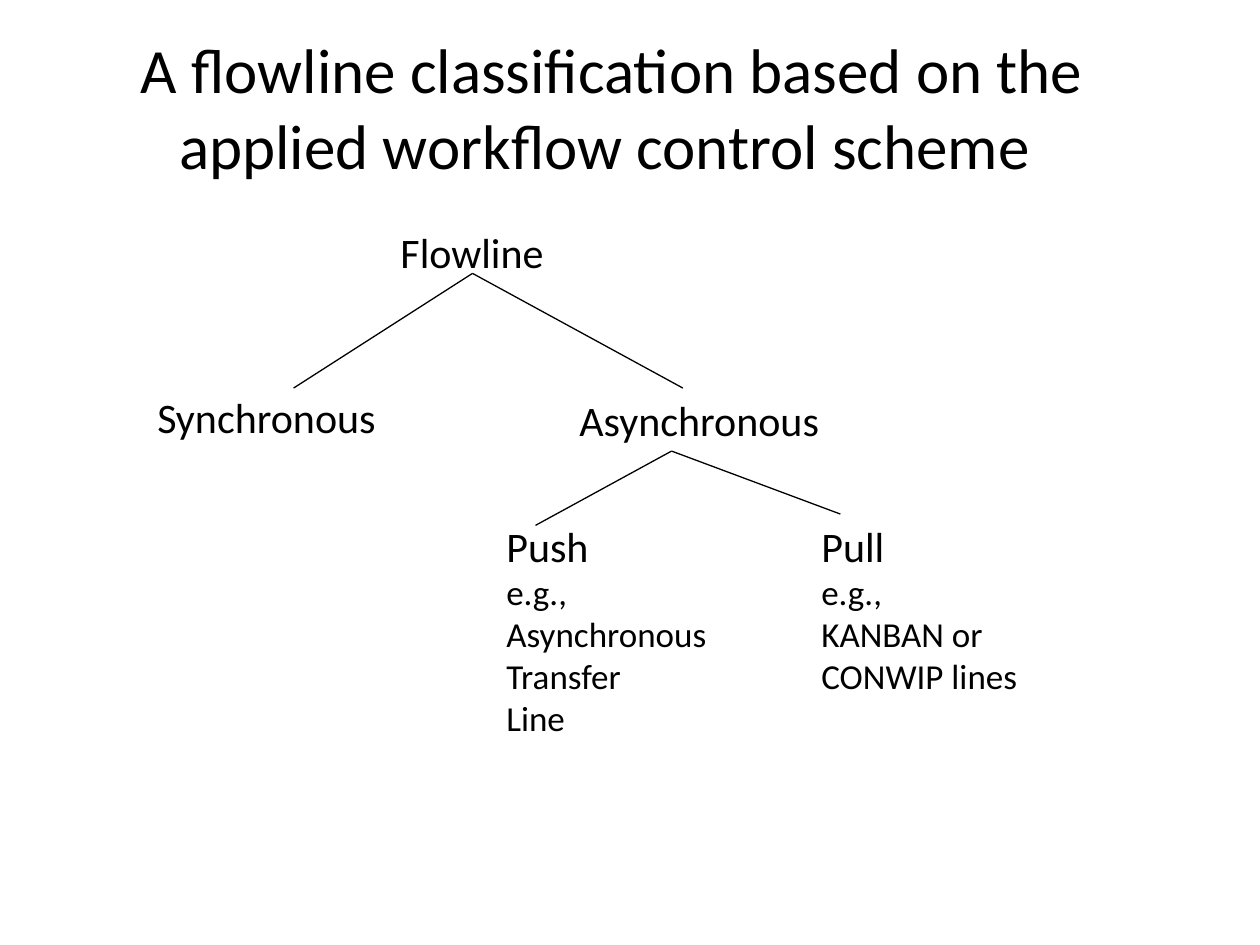
from lxml import etree
from pptx import Presentation
from pptx.dml.color import RGBColor
from pptx.enum.shapes import MSO_CONNECTOR
from pptx.enum.text import MSO_ANCHOR, MSO_AUTO_SIZE, PP_ALIGN
from pptx.oxml.ns import qn
from pptx.util import Inches, Pt

STRAIGHT = MSO_CONNECTOR.STRAIGHT
MIDDLE = MSO_ANCHOR.MIDDLE
CENTER = PP_ALIGN.CENTER
FIT_SHAPE = MSO_AUTO_SIZE.SHAPE_TO_FIT_TEXT
NO_AUTOSIZE = MSO_AUTO_SIZE.NONE

FONT = "Calibri"
BLACK = "000000"
TITLE = "A flowline classification based on the applied workflow control scheme "

# left, top, width, height, category name, example lines
CATEGORIES = [
    (3.08, 1.75, 1.39, 0.5, "Flowline", []),
    (1.15, 3.06, 1.94, 0.5, "Synchronous", []),
    (4.5, 3.08, 2.13, 0.5, "Asynchronous", []),
    (3.92, 4.08, 1.81, 1.83, "Push", ["e.g.,", "Asynchronous", "Transfer", "Line"]),
    (6.42, 4.08, 1.89, 1.5, "Pull", ["e.g.,", "KANBAN or", "CONWIP lines"]),
]

# fork point, ends of its branches
FORKS = [
    ((3.75, 2.17), [(2.33, 3.08), (5.42, 3.08)]),
    ((5.33, 3.58), [(4.25, 4.17), (6.67, 4.08)]),
]


def color(hex_string):
    return RGBColor.from_string(hex_string)


def format_font(paragraph, size):
    paragraph.font.name = FONT
    paragraph.font.size = Pt(size)
    paragraph.font.color.rgb = color(BLACK)


def set_title(slide, text):
    title = slide.shapes.title
    title.left, title.top = Inches(0.35), Inches(0.22)
    title.width, title.height = Inches(9.01), Inches(1.25)
    frame = title.text_frame
    frame.text = text
    frame.vertical_anchor = MIDDLE
    frame.auto_size = NO_AUTOSIZE
    paragraph = frame.paragraphs[0]
    paragraph.alignment = CENTER
    format_font(paragraph, 36)


def add_category(slide, left, top, width, height, name, examples):
    """Add a category name with its smaller example lines below."""
    box = slide.shapes.add_textbox(
        Inches(left), Inches(top), Inches(width), Inches(height))
    frame = box.text_frame
    frame.text = "\n".join([name] + examples)
    frame.word_wrap = False
    frame.auto_size = FIT_SHAPE
    for index, paragraph in enumerate(frame.paragraphs):
        format_font(paragraph, 20 if index else 24)


def add_branch(slide, start, end):
    points = [Inches(value) for value in start + end]
    connector = slide.shapes.add_connector(STRAIGHT, *points)
    connector.line.color.rgb = color(BLACK)
    connector.line.width = Pt(0.75)
    etree.SubElement(connector._element.spPr, qn("a:effectLst"))


def main():
    presentation = Presentation()
    presentation.slide_width = Inches(10)
    presentation.slide_height = Inches(7.5)
    title_only = presentation.slide_layouts[5]
    slide = presentation.slides.add_slide(title_only)
    set_title(slide, TITLE)
    for category in CATEGORIES:
        add_category(slide, *category)
    for fork, ends in FORKS:
        for end in ends:
            add_branch(slide, fork, end)
    presentation.save("out.pptx")


if __name__ == "__main__":
    main()
